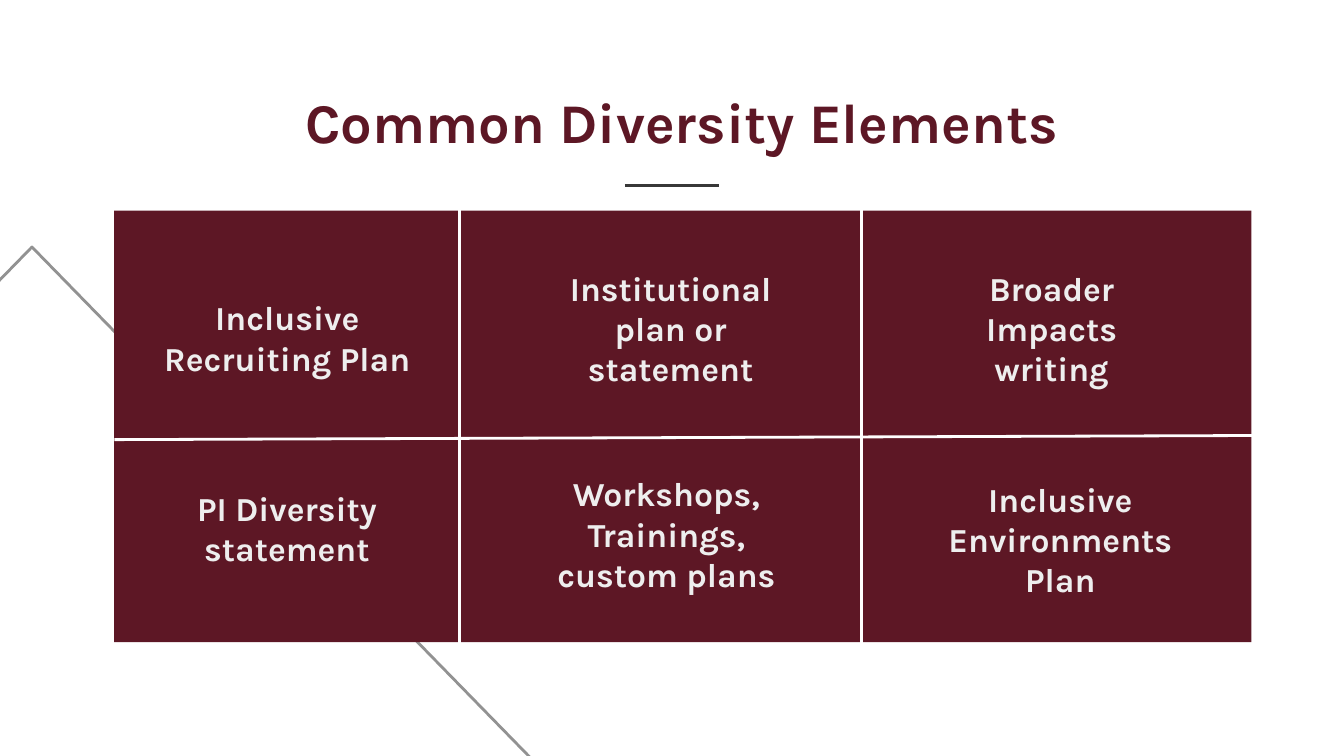
"""Build the Common Diversity Elements slide."""
import pptx
import pptx.dml.color
import pptx.enum.shapes
import pptx.enum.text
import pptx.util
import lxml.etree

Cm, Pt = pptx.util.Cm, pptx.util.Pt
RGB = pptx.dml.color.RGBColor.from_string
SHAPE = pptx.enum.shapes.MSO_SHAPE
ANCHOR = pptx.enum.text.MSO_ANCHOR

THEME = {
    "font": "Karla", "title_size": 30, "cell_size": 18, "line_width": 1.5,
    "maroon": "5D1725", "light": "EEEEEE", "white": "FFFFFF",
    "gray": "929292", "dark": "383838",
}
TITLE = ("Common Diversity Elements", 3.51, 1.4, 18.75, 1.47)
CELL_HEIGHT = 1.12
CELLS = [
    ("Inclusive Recruiting Plan", 2.79, 5.82, 5.28),
    ("Institutional plan or statement", 10.06, 5.64, 5.23),
    ("Broader Impacts writing", 17.27, 5.64, 5.21),
    ("PI Diversity statement", 1.88, 9.42, 7.09),
    ("Workshops, Trainings, custom plans", 9.98, 9.53, 5.23),
    ("Inclusive Environments Plan", 17.27, 9.63, 5.54),
]
TRIANGLE = (-9.68, 4.67, 20.57, 10.54)
PANEL = (2.16, 3.98, 21.49, 8.16)
LINES = [
    (16.28, 3.81, 16.28, 12.8, "white"),
    (8.69, 3.78, 8.69, 12.8, "white"),
    (2.16, 8.31, 24.23, 8.23, "white"),
    (11.81, 3.51, 13.59, 3.51, "dark"),
]


def add_shape(s, kind, box, fill=None, line=None):
    sp = s.shapes.add_shape(kind, *map(Cm, box))
    sp.shadow.inherit = False
    if fill:
        sp.fill.solid()
        sp.fill.fore_color.rgb = RGB(THEME[fill])
    else:
        sp.fill.background()
    if line:
        sp.line.color.rgb = RGB(THEME[line])
        sp.line.width = Pt(THEME["line_width"])
    else:
        sp.line.fill.background()


def add_text(s, text, box, size, color, anchor):
    tf = s.shapes.add_textbox(*map(Cm, box)).text_frame
    frame = {"word_wrap": True, "vertical_anchor": anchor}
    frame |= {f"margin_{side}": Cm(0.25) for side in ("left", "top", "right", "bottom")}
    for name, value in frame.items():
        setattr(tf, name, value)
    p = tf.paragraphs[0]
    p.alignment = pptx.enum.text.PP_ALIGN.CENTER
    r = p.add_run()
    r.text = text
    for name, value in {"name": THEME["font"], "size": Pt(THEME[size]), "bold": True}.items():
        setattr(r.font, name, value)
    r.font.color.rgb = RGB(THEME[color])


def add_line(s, ends, color):
    kind = pptx.enum.shapes.MSO_CONNECTOR.STRAIGHT
    sp = s.shapes.add_connector(kind, *map(Cm, ends))
    sp.line.color.rgb = RGB(THEME[color])
    sp.line.width = Pt(THEME["line_width"])
    effects = pptx.oxml.ns.qn("a:effectLst")
    lxml.etree.SubElement(sp._element.spPr, effects)


def main():
    prs = pptx.Presentation()
    prs.slide_width, prs.slide_height = Cm(25.4), Cm(14.29)
    s = prs.slides.add_slide(prs.slide_layouts[6])
    add_shape(s, SHAPE.ISOSCELES_TRIANGLE, TRIANGLE, line="gray")
    add_shape(s, SHAPE.RECTANGLE, PANEL, fill="maroon")
    for text, left, top, width in CELLS:
        box = (left, top, width, CELL_HEIGHT)
        add_text(s, text, box, "cell_size", "light", ANCHOR.MIDDLE)
    add_text(s, TITLE[0], TITLE[1:], "title_size", "maroon", ANCHOR.TOP)
    for *ends, color in LINES:
        add_line(s, ends, color)
    prs.save("out.pptx")


if __name__ == "__main__":
    main()
